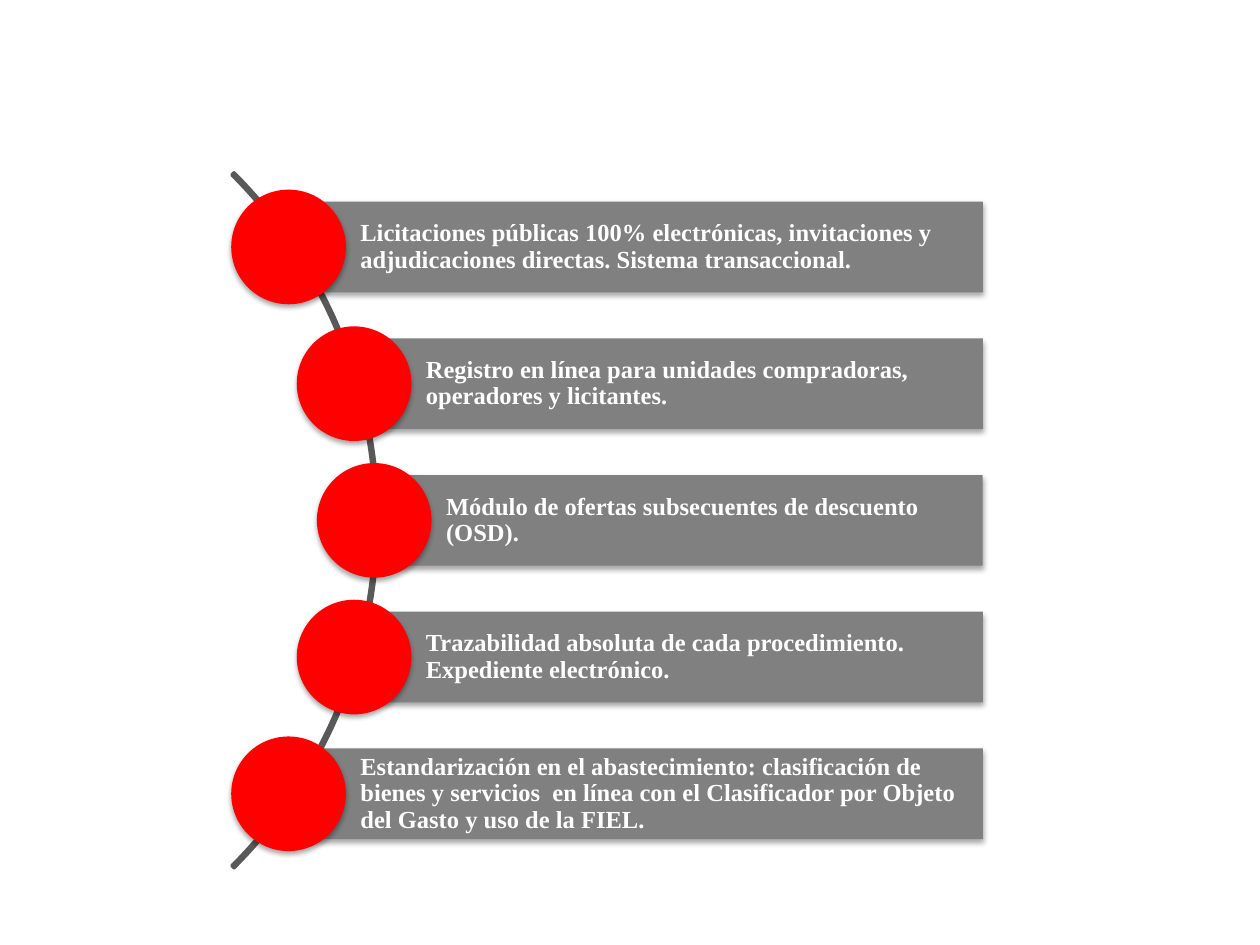
from dataclasses import dataclass

from lxml.etree import SubElement
from pptx import Presentation
from pptx.dml.color import RGBColor
from pptx.enum.shapes import MSO_SHAPE
from pptx.enum.text import MSO_ANCHOR, PP_ALIGN
from pptx.oxml.ns import qn
from pptx.shapes.autoshape import Shape
from pptx.slide import Slide
from pptx.util import Inches, Pt

COLORS = {
    "bar": "808080",
    "disc": "FF0000",
    "arc": "595959",
    "white": "FFFFFF",
    "shadow": "000000",
}
FONT = "Times New Roman"

ARC_X, MID_Y, ARC_SIZE = -0.9, 4.13, 7.8
STEP = 1.085
BAR_RIGHT, BAR_HEIGHT = 7.8, 0.72
DISC_SIZE = 0.91


@dataclass
class Item:
    x: float  # centre of the disc and left edge of the bar
    text: str


ITEMS = [
    Item(2.29, "Licitaciones públicas 100% electrónicas, invitaciones y "
               "adjudicaciones directas. Sistema transaccional."),
    Item(2.81, "Registro en línea para unidades compradoras, operadores y "
               "licitantes."),
    Item(2.97, "Módulo de ofertas subsecuentes de descuento (OSD)."),
    Item(2.81, "Trazabilidad absoluta de cada procedimiento. Expediente "
               "electrónico."),
    Item(2.29, "Estandarización en el abastecimiento: clasificación de bienes "
               "y servicios  en línea con el Clasificador por Objeto del Gasto "
               "y uso de la FIEL."),
]


def color(name: str) -> RGBColor:
    return RGBColor.from_string(COLORS[name])


def add_shape(slide: Slide, kind: MSO_SHAPE, left: float, mid: float,
              width: float, height: float, fill: str) -> Shape:
    """Add a plain filled shape, centred vertically on mid."""
    shape = slide.shapes.add_shape(
        kind, Inches(left), Inches(mid - height / 2),
        Inches(width), Inches(height))
    shape.shadow.inherit = False
    shape.fill.solid()
    shape.fill.fore_color.rgb = color(fill)
    shape.line.fill.background()
    return shape


def add_shadow(shape: Shape) -> None:
    effects = shape.element.spPr.find(qn("a:effectLst"))
    outer = SubElement(effects, qn("a:outerShdw"), blurRad=str(Pt(3.1)),
                       dist=str(Pt(1.8)), dir="5400000", rotWithShape="0")
    tint = SubElement(outer, qn("a:srgbClr"), val=COLORS["shadow"])
    SubElement(tint, qn("a:alpha"), val="35000")


def add_arc(slide: Slide) -> None:
    arc = add_shape(slide, MSO_SHAPE.BLOCK_ARC, ARC_X - ARC_SIZE / 2, MID_Y,
                    ARC_SIZE, ARC_SIZE, "white")
    for i, value in enumerate((189, 27, 0.003)):
        arc.adjustments[i] = value
    arc.line.color.rgb = color("arc")
    arc.line.width = Pt(2)


def set_text(shape: Shape, text: str) -> None:
    frame = shape.text_frame
    frame.text = text
    frame.word_wrap = True
    frame.vertical_anchor = MSO_ANCHOR.MIDDLE
    frame.margin_left = Inches(0.57)
    frame.margin_top = frame.margin_right = frame.margin_bottom = Inches(0.04)
    para = frame.paragraphs[0]
    para.alignment = PP_ALIGN.LEFT
    para.line_spacing = 0.9
    font = para.runs[0].font
    font.name = FONT
    font.size = Pt(14)
    font.bold = True
    font.color.rgb = color("white")


def add_item(slide: Slide, item: Item, mid: float) -> None:
    bar = add_shape(slide, MSO_SHAPE.RECTANGLE, item.x, mid,
                    BAR_RIGHT - item.x, BAR_HEIGHT, "bar")
    add_shadow(bar)
    set_text(bar, item.text)
    disc = add_shape(slide, MSO_SHAPE.OVAL, item.x - DISC_SIZE / 2, mid,
                     DISC_SIZE, DISC_SIZE, "disc")
    add_shadow(disc)


def main() -> None:
    deck = Presentation()
    deck.slide_width, deck.slide_height = Inches(10), Inches(7.5)
    slide = deck.slides.add_slide(deck.slide_layouts[6])
    add_arc(slide)
    for i, item in enumerate(ITEMS):
        add_item(slide, item, MID_Y + (i - len(ITEMS) // 2) * STEP)
    deck.save("out.pptx")


if __name__ == "__main__":
    main()
